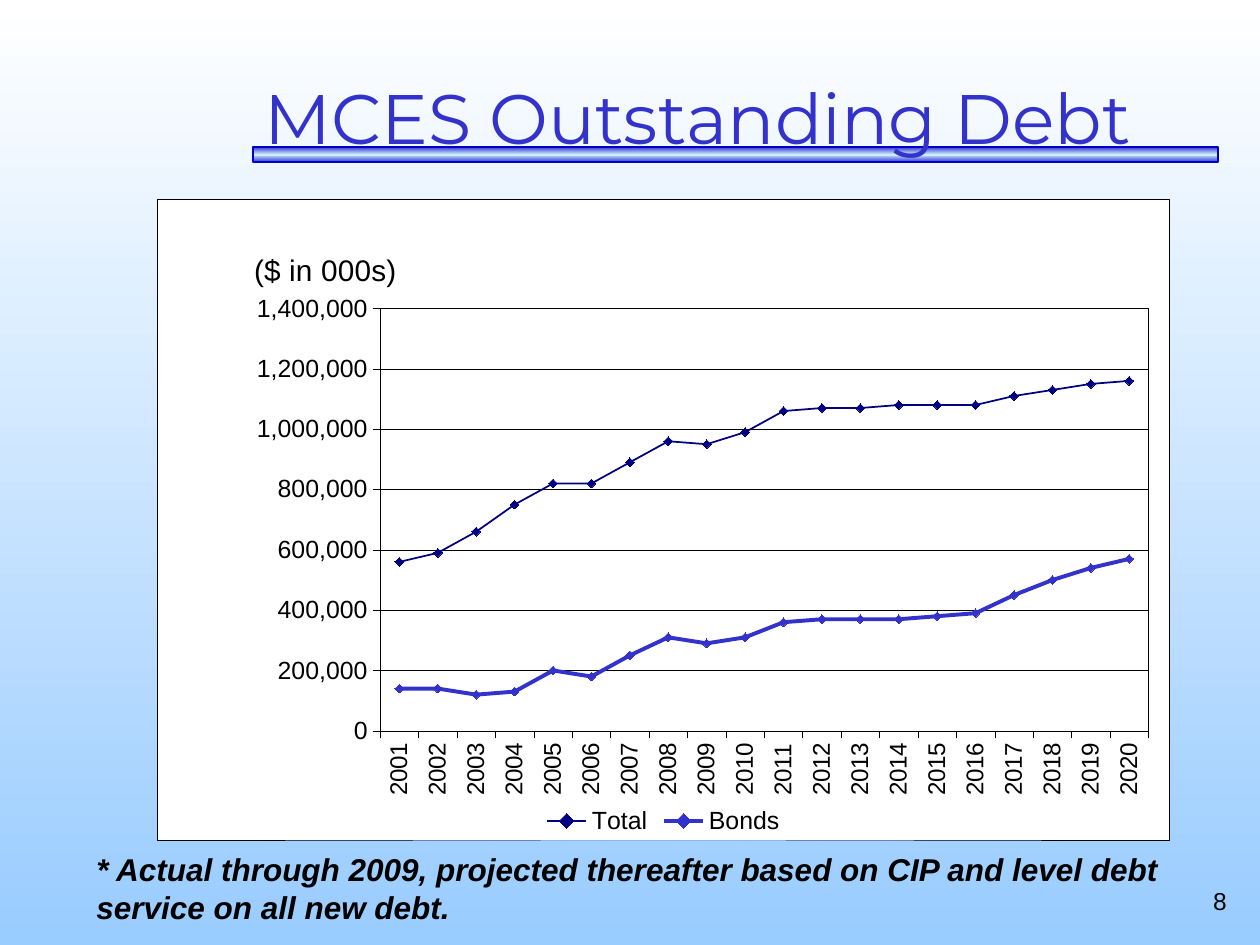
from copy import deepcopy

from lxml import etree
from pptx import Presentation
from pptx.chart.data import CategoryChartData
from pptx.dml.color import RGBColor
from pptx.enum.chart import XL_CHART_TYPE, XL_LEGEND_POSITION, XL_MARKER_STYLE, XL_TICK_MARK
from pptx.enum.shapes import MSO_SHAPE
from pptx.enum.text import MSO_ANCHOR, PP_ALIGN
from pptx.oxml import parse_xml
from pptx.oxml.ns import nsdecls, qn
from pptx.util import Pt

LINE_MARKERS = XL_CHART_TYPE.LINE_MARKERS
BOTTOM_LEGEND = XL_LEGEND_POSITION.BOTTOM
DIAMOND = XL_MARKER_STYLE.DIAMOND
OUTSIDE = XL_TICK_MARK.OUTSIDE
RECTANGLE = MSO_SHAPE.RECTANGLE
BOTTOM, TOP = MSO_ANCHOR.BOTTOM, MSO_ANCHOR.TOP
LEFT, RIGHT = PP_ALIGN.LEFT, PP_ALIGN.RIGHT

BLACK, WHITE, BLUE, NAVY = "000000", "FFFFFF", "3333CC", "000080"
HAIRLINE = 0.25

YEARS = [str(year) for year in range(2001, 2021)]
DEBT = {  # in thousands of thousands: name, values, colour, line width
    "Total": ([560, 590, 660, 750, 820, 820, 890, 960, 950, 990,
               1060, 1070, 1070, 1080, 1080, 1080, 1110, 1130, 1150, 1160], NAVY, 1),
    "Bonds": ([140, 140, 120, 130, 200, 180, 250, 310, 290, 310,
               360, 370, 370, 370, 380, 390, 450, 500, 540, 570], BLUE, 2.25),
}


def color(value):
    return RGBColor.from_string(value)


def set_font(font, **formats):
    formats = {"name": "Arial", "color": BLACK, **formats}
    font.color.rgb = color(formats.pop("color"))
    font.size = Pt(formats.pop("size"))
    for key, value in formats.items():
        setattr(font, key, value)


def set_line(line, value=BLACK, width=HAIRLINE):
    line.color.rgb = color(value)
    line.width = Pt(width)


def set_gradient(fill, element, colors):
    """Vertical gradient with evenly spaced colours."""
    fill.gradient()
    fill.gradient_angle = 270
    stops = element.find(".//" + qn("a:gsLst"))
    while len(stops) < len(colors):
        stops.append(deepcopy(stops[0]))
    for index, (stop, value) in enumerate(zip(fill.gradient_stops, colors)):
        stop.color.rgb = color(value)
        stop.position = index / (len(colors) - 1)


def write_text(shape, text, align=LEFT, anchor=TOP, **formats):
    frame = shape.text_frame
    frame.word_wrap = True
    frame.vertical_anchor = anchor
    para = frame.paragraphs[0]
    para.alignment = align
    span = para.add_run()
    span.text = text
    set_font(span.font, **formats)


def add_text(page, box, text, **formats):
    write_text(page.shapes.add_textbox(*map(Pt, box)), text, **formats)


def add_heading(page, box, text):
    title = page.shapes.title
    title.left, title.top, title.width, title.height = map(Pt, box)
    write_text(title, text, anchor=BOTTOM, name="Montserrat", size=40, color=BLUE)

    # Bar under the title, behind its text
    left, top, width, height = box
    bar = page.shapes.add_shape(
        RECTANGLE, Pt(left + 0.7), Pt(top + height - 10), Pt(width - 24.5), Pt(8.8))
    bar.shadow.inherit = False
    set_gradient(bar.fill, bar.element, [BLUE, "CCECFF", BLUE])
    set_line(bar.line, "0000CC", 1)
    title.element.addprevious(bar.element)


def set_layout(parent, position, **places):
    """Place a chart part by fractions of the chart area."""
    for old in parent.findall(qn("c:layout")):
        parent.remove(old)
    layout = parse_xml(f"<c:layout {nsdecls('c')}><c:manualLayout/></c:layout>")
    for tag, value in places.items():
        etree.SubElement(layout[0], qn("c:" + tag)).set("val", str(value))
    parent.insert(position, layout)


def add_area_format(parent, before=()):
    """White fill and black hairline for the chart or plot area."""
    area = parse_xml(
        f"<c:spPr {nsdecls('c', 'a')}><a:solidFill><a:srgbClr val='{WHITE}'/></a:solidFill>"
        f"<a:ln w='{Pt(HAIRLINE)}'><a:solidFill><a:srgbClr val='{BLACK}'/></a:solidFill></a:ln>"
        "</c:spPr>")
    followers = [child for child in parent if child.tag in map(qn, before)]
    if followers:
        followers[0].addprevious(area)
    else:
        parent.append(area)


def add_debt_chart(page, box):
    data = CategoryChartData(number_format="#,##0")
    data.categories = YEARS
    for name, (values, _, _) in DEBT.items():
        data.add_series(name, [value * 1000 for value in values])
    chart = page.shapes.add_chart(LINE_MARKERS, *map(Pt, box), data).chart
    set_font(chart.font, size=14.2)
    plot = chart.plots[0]
    plot.vary_by_categories = False

    # Title and legend
    chart.has_title = True
    title = chart.chart_title
    title.include_in_layout = False
    span = title.text_frame.paragraphs[0].add_run()
    span.text = "($ in 000s)"
    set_font(span.font, size=17, bold=False)
    set_layout(title._element, 1, xMode="edge", yMode="edge", x=0.09, y=0.07)
    chart.has_legend = True
    chart.legend.position = BOTTOM_LEGEND
    chart.legend.include_in_layout = False
    set_font(chart.legend.font, size=14.2)

    # Axes
    for axis, size in ((chart.category_axis, 13.8), (chart.value_axis, 14.2)):
        axis.major_tick_mark = OUTSIDE
        set_line(axis.format.line)
        set_font(axis.tick_labels.font, size=size)
    years = chart.category_axis._element.find(qn("c:txPr")).find(qn("a:bodyPr"))
    years.set("rot", "-5400000")
    years.set("vert", "horz")
    amounts = chart.value_axis
    amounts.minimum_scale, amounts.maximum_scale, amounts.major_unit = 0, 1400000, 200000
    amounts.tick_labels.number_format = "#,##0"
    amounts.tick_labels.number_format_is_linked = False
    amounts.has_major_gridlines = True
    set_line(amounts.major_gridlines.format.line)

    # Series
    for series in plot.series:
        _, value, width = DEBT[series.name]
        series.smooth = False
        set_line(series.format.line, value, width)
        series.marker.style = DIAMOND
        series.marker.size = 5
        series.marker.format.fill.solid()
        series.marker.format.fill.fore_color.rgb = color(value)
        set_line(series.marker.format.line, value)

    # Plot area and frame
    chart_space = chart._chartSpace
    plot_area = chart_space.find(".//" + qn("c:plotArea"))
    set_layout(plot_area, 0, layoutTarget="inner", xMode="edge", yMode="edge",
               x=0.22, y=0.17, w=0.76, h=0.66)
    add_area_format(plot_area)
    add_area_format(chart_space, before=("c:txPr", "c:externalData"))


def main():
    deck = Presentation()
    deck.slide_width, deck.slide_height = Pt(720), Pt(540)
    page = deck.slides.add_slide(deck.slide_layouts[5])
    set_gradient(page.background.fill, page.element, [WHITE, "99CCFF"])

    add_heading(page, (144, 30, 576, 64), "MCES Outstanding Debt")
    add_text(page, (540, 502.5, 168, 37.5), "8", align=RIGHT, size=14)
    add_text(page, (48, 482, 630, 51),
             "* Actual through 2009, projected thereafter based on CIP and level debt "
             "service on all new debt.", size=18, bold=True, italic=True)
    add_debt_chart(page, (90, 114, 578, 366))
    deck.save("out.pptx")


if __name__ == "__main__":
    main()
